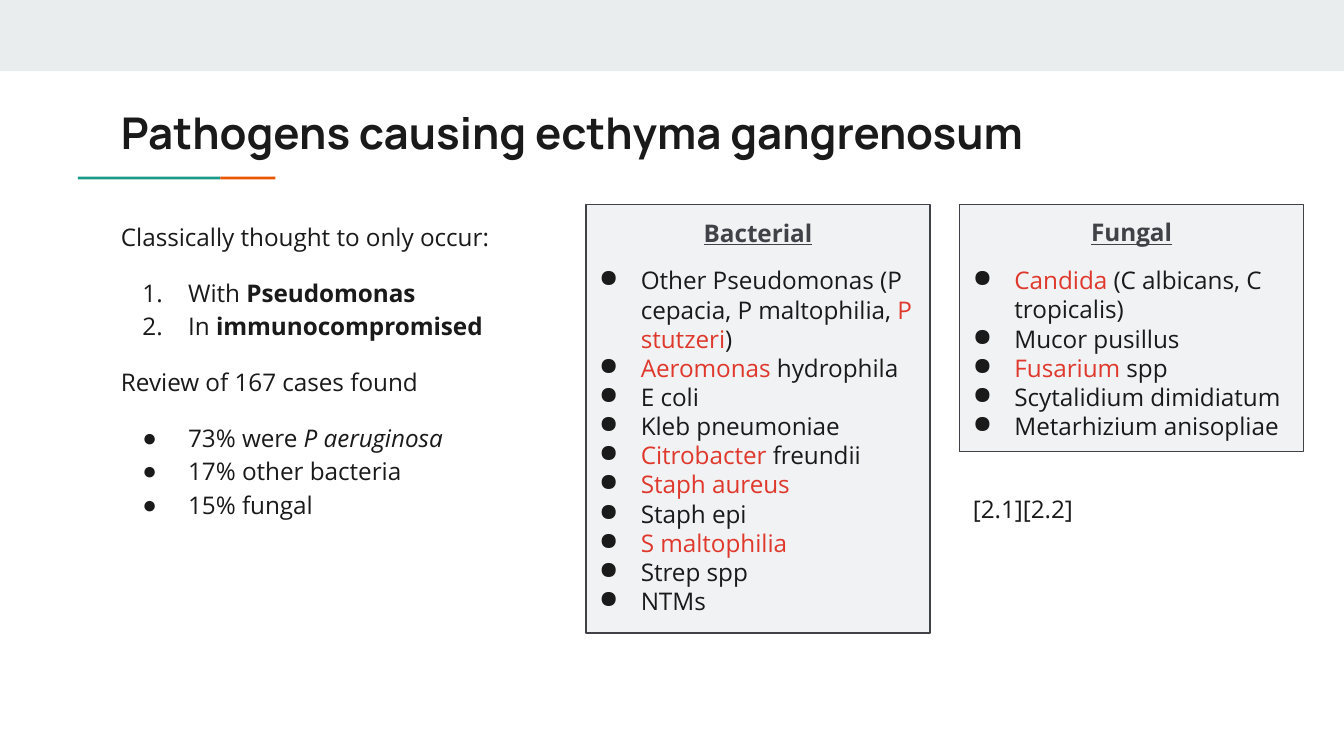
import pptx
import pptx.dml.color
import pptx.enum.shapes
import pptx.enum.text
import pptx.oxml
import pptx.oxml.ns
import pptx.util

INK, SLATE, RED = "1A1A1A", "404247", "DF382C"
PANEL, BAND, TEAL, ORANGE = "F1F2F3", "E9EDEE", "1A9988", "EB5600"
BULLET = '<a:buChar {ns} char="●"/>'
NUMBER = '<a:buAutoNum {ns} type="arabicPeriod"/>'
PLAIN = "<a:buNone {ns}/>"


def color(hex_code):
    return pptx.dml.color.RGBColor.from_string(hex_code)


class Deck:
    """Style and current slide, measured on a grid of 0.1 inch cells."""

    cell = pptx.util.Inches(0.1)
    heading_font, text_font = "Manrope", "Open Sans"
    text_size = 13

    def __init__(self, columns, rows):
        self.presentation = pptx.Presentation()
        self.presentation.slide_width = self.length(columns)
        self.presentation.slide_height = self.length(rows)
        layout = self.presentation.slide_layouts[1]
        self.slide = self.presentation.slides.add_slide(layout)

    def length(self, cells):
        return round(cells * self.cell)

    def place(self, shape, area):
        shape.left, shape.top, shape.width, shape.height = map(self.length, area)

    def frame(self, shape, anchor=pptx.enum.text.MSO_ANCHOR.TOP):
        frame = shape.text_frame
        frame.word_wrap = True
        frame.auto_size = pptx.enum.text.MSO_AUTO_SIZE.NONE
        frame.vertical_anchor = anchor
        frame.margin_left = frame.margin_right = self.length(1)
        frame.margin_top = frame.margin_bottom = self.length(1)
        return frame

    def paragraph(self, frame, runs, marker=PLAIN, indent=0, hanging=0, before=0,
                  spacing=1.0, align=pptx.enum.text.PP_ALIGN.LEFT,
                  font=text_font, size=text_size, ink=INK, bold=False, underline=False):
        first = frame.paragraphs[0]
        paragraph = frame.add_paragraph() if first.runs else first
        paragraph.alignment = align
        paragraph.line_spacing = spacing
        paragraph.space_before = pptx.util.Pt(before)
        properties = paragraph._p.get_or_add_pPr()
        properties.set("marL", str(self.length(indent)))
        properties.set("indent", str(-self.length(hanging)))
        namespace = pptx.oxml.ns.nsdecls("a")
        if marker != PLAIN:
            tint = f'<a:buClr {namespace}><a:srgbClr val="{INK}"/></a:buClr>'
            properties.append(pptx.oxml.parse_xml(tint))
        properties.append(pptx.oxml.parse_xml(marker.format(ns=namespace)))
        paragraph.font.name = font
        paragraph.font.size = pptx.util.Pt(size)
        paragraph.font.bold = bold
        paragraph.font.underline = underline
        paragraph.font.color.rgb = color(ink)
        for words, *emphasis in runs:
            run = paragraph.add_run()
            run.text = words
            if "bold" in emphasis:
                run.font.bold = True
            if "italic" in emphasis:
                run.font.italic = True
            if "red" in emphasis:
                run.font.color.rgb = color(RED)

    def title(self, words, area):
        heading = self.slide.shapes.title
        self.place(heading, area)
        frame = self.frame(heading, pptx.enum.text.MSO_ANCHOR.MIDDLE)
        self.paragraph(frame, [(words,)], font=self.heading_font, size=23.4, bold=True)

    def body(self, sections, area):
        summary = self.slide.placeholders[1]
        self.place(summary, area)
        frame = self.frame(summary)
        for index, (lead, marker, points) in enumerate(sections):
            self.paragraph(frame, [(lead,)], before=12 if index else 0, spacing=1.15)
            for order, runs in enumerate(points):
                self.paragraph(frame, runs, marker, 5, 3.4, 0 if order else 12, 1.15)

    def bar(self, area, fill, line=None):
        bar = self.slide.shapes.add_shape(
            pptx.enum.shapes.MSO_SHAPE.RECTANGLE, *map(self.length, area))
        bar.shadow.inherit = False
        bar.fill.solid()
        bar.fill.fore_color.rgb = color(fill)
        if line:
            bar.line.color.rgb = color(line)
            bar.line.width = pptx.util.Pt(0.75)
        else:
            bar.line.fill.background()
        return bar

    def panel(self, heading, organisms, area):
        frame = self.frame(self.bar(area, PANEL, SLATE))
        self.paragraph(frame, [(heading,)], align=pptx.enum.text.PP_ALIGN.CENTER,
                       ink=SLATE, bold=True, underline=True)
        for order, runs in enumerate(organisms):
            self.paragraph(frame, runs, BULLET, 3.1, 3.1, 0 if order else 10)

    def note(self, words, area):
        box = self.slide.shapes.add_textbox(*map(self.length, area))
        self.paragraph(self.frame(box), [(words,)])


def main():
    deck = Deck(100, 56.25)
    deck.bar((0, 0, 100, 5.3), BAND)
    deck.bar((5.8, 13.15, 10.6, 0.2), TEAL)
    deck.bar((16.4, 13.15, 4.1, 0.2), ORANGE)
    deck.title("Pathogens causing ecthyma gangrenosum", (8, 6.9, 84.1, 5.9))
    deck.body([
        ("Classically thought to only occur:", NUMBER, [
            [("With ",), ("Pseudomonas", "bold")],
            [("In ",), ("immunocompromised", "bold")],
        ]),
        ("Review of 167 cases found", BULLET, [
            [("73% were ",), ("P aeruginosa", "italic")],
            [("17% other bacteria",)],
            [("15% fungal",)],
        ]),
    ], (8, 15.2, 30.1, 24.7))

    panel_top, panel_width = 15.2, 25.6
    bacterial_left, fungal_left = 43.6, 71.4
    deck.panel("Bacterial", [
        [("Other Pseudomonas (P cepacia, P maltophilia, ",), ("P stutzeri", "red"), (")",)],
        [("Aeromonas ", "red"), ("hydrophila",)],
        [("E coli",)],
        [("Kleb pneumoniae",)],
        [("Citrobacter ", "red"), ("freundii",)],
        [("Staph aureus", "red")],
        [("Staph epi",)],
        [("S maltophilia", "red")],
        [("Strep spp",)],
        [("NTMs",)],
    ], (bacterial_left, panel_top, panel_width, 31.9))
    deck.panel("Fungal", [
        [("Candida ", "red"), ("(C albicans, C tropicalis)",)],
        [("Mucor pusillus",)],
        [("Fusarium ", "red"), ("spp",)],
        [("Scytalidium dimidiatum",)],
        [("Metarhizium anisopliae",)],
    ], (fungal_left, panel_top, panel_width, 18.4))
    deck.note("[2.1][2.2]", (fungal_left, 35.8, 28.6, 4.2))
    deck.presentation.save("out.pptx")


if __name__ == "__main__":
    main()
